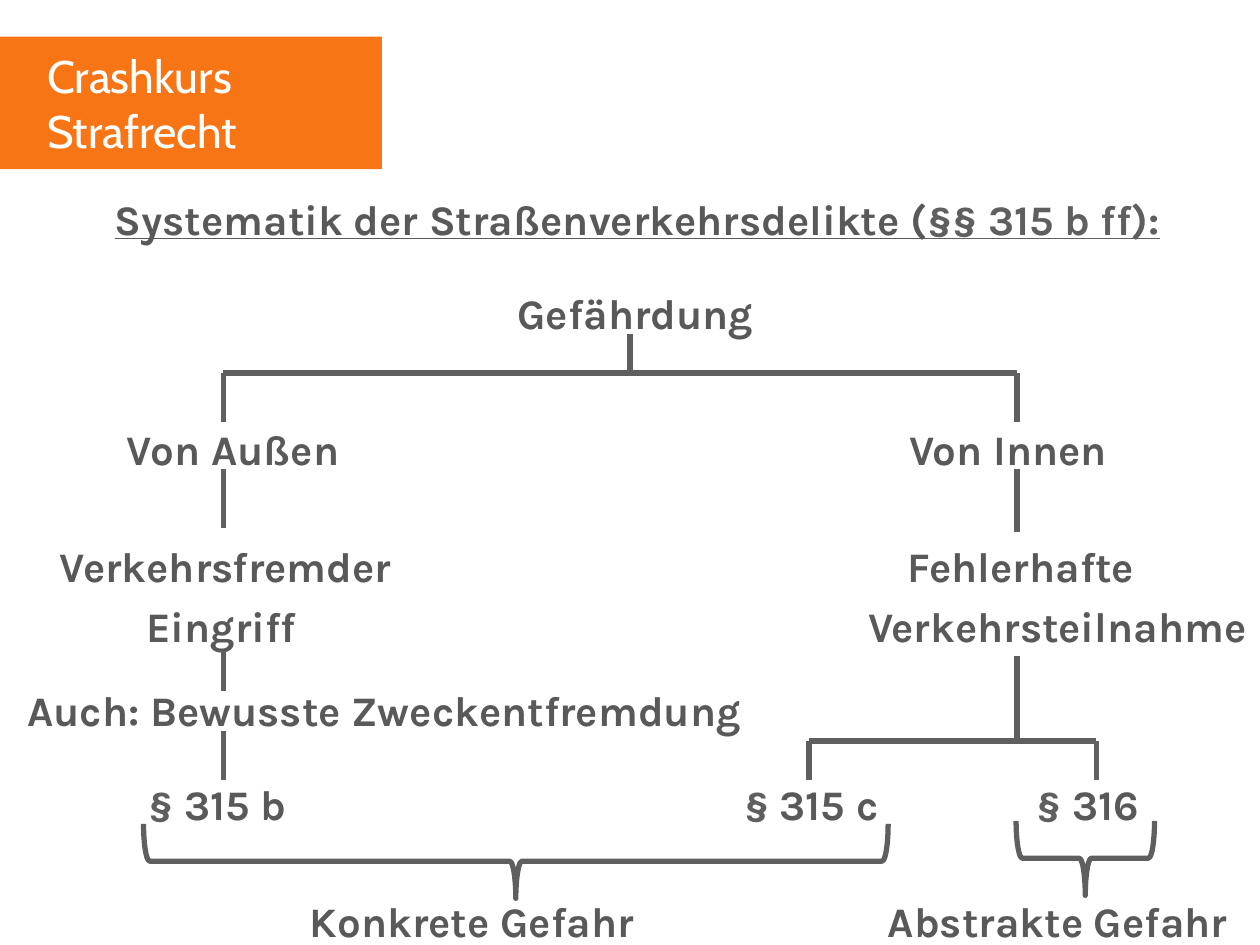
from lxml.etree import SubElement
from pptx import Presentation
from pptx.dml.color import RGBColor
from pptx.enum.shapes import MSO_CONNECTOR as Connector, MSO_SHAPE as Shape
from pptx.enum.text import MSO_ANCHOR as Anchor, MSO_AUTO_SIZE as AutoSize, PP_ALIGN as Align
from pptx.oxml.ns import qn
from pptx.util import Cm, Pt

ORANGE, WHITE, TEXT, GRAY = "F77515", "FFFFFF", "595959", "5F5F5F"
BOLD = {"name": "Karla", "size": Pt(24), "bold": True}
HEADING = {**BOLD, "underline": True}
BANNER = {"name": "Cabin", "size": Pt(26), "bold": False}
LABEL_HEIGHT = 1

# Columns of the tree and its horizontal bars
OUTER, ROOT, INNER = 4.5, 12.7, 20.5
SECTION_C, SECTION_316 = 16.31, 22.1
FORK, LOWER_FORK, SECTION_TOP = 7.52, 14.94, 15.72

# Top of each row, then text, left and width of its labels
ROWS = [
    (5.79, [("Gefährdung", 10.43, 4.8)]),
    (8.53, [("Von Außen", 2.56, 4.3), ("Von Innen", 18.33, 4)]),
    (10.9, [("Verkehrsfremder", 1.2, 6.7), ("Fehlerhafte", 18.3, 4.6)]),
    (12.1, [("Eingriff", 2.95, 3.1), ("Verkehrsteilnahme", 17.5, 7.7)]),
    (13.8, [("Auch: Bewusste Zweckentfremdung", 0.55, 14.4)]),
    (15.7, [("§ 315 b", 3, 2.8), ("§ 315 c", 15, 2.8), ("§ 316", 20.9, 2.1)]),
    (18.06, [("Konkrete Gefahr", 6.25, 6.6), ("Abstrakte Gefahr", 17.9, 6.9)]),
]

LINES = [
    (ROOT, 6.73, ROOT, FORK),
    (OUTER, FORK, INNER, FORK),
    (OUTER, FORK, OUTER, 8.51),
    (INNER, FORK, INNER, 8.51),
    (OUTER, 9.45, OUTER, 10.64),
    (INNER, 9.45, INNER, 10.72),
    (OUTER, 13.13, OUTER, 13.92),
    (OUTER, 14.73, OUTER, SECTION_TOP),
    (INNER, 13.23, INNER, LOWER_FORK),
    (SECTION_C, LOWER_FORK, SECTION_316, LOWER_FORK),
    (SECTION_C, LOWER_FORK, SECTION_C, SECTION_TOP),
    (SECTION_316, LOWER_FORK, SECTION_316, SECTION_TOP),
]

# Centre x, centre y and span of each brace
BRACES = [(10.4, 17.36, 15.01), (21.88, 17.3, 2.79)]


def rgb(value):
    return RGBColor.from_string(value)


def set_attrs(target, values):
    for name, value in values.items():
        setattr(target, name, value)


def set_place(sp, left, top, width, height):
    set_attrs(sp, {"left": Cm(left), "top": Cm(top),
                   "width": Cm(width), "height": Cm(height)})


def write(sp, runs, font, align, frame):
    """Fill a shape with one paragraph of (text, colour) runs."""
    tf = sp.text_frame
    margins = {f"margin_{side}": 0 for side in ("left", "right", "top", "bottom")}
    set_attrs(tf, {**margins, "auto_size": AutoSize.NONE, **frame})
    p = tf.paragraphs[0]
    p.alignment = align
    for text, color in runs:
        r = p.add_run()
        r.text = text
        set_attrs(r.font, font)
        r.font.color.rgb = rgb(color)


def add_banner(s, text):
    sp = s.shapes.add_shape(Shape.RECTANGLE, 0, Cm(0.74), Cm(7.7), Cm(2.67))
    sp.shadow.inherit = False
    sp.fill.solid()
    sp.fill.fore_color.rgb = rgb(ORANGE)
    sp.line.fill.background()
    write(sp, [(text, WHITE)], BANNER, Align.LEFT,
          {"word_wrap": True, "vertical_anchor": Anchor.MIDDLE,
           "margin_left": Cm(0.95), "margin_right": Cm(0.4)})


def add_heading(s, runs):
    sp = s.shapes.title
    set_place(sp, 0.3, 3.9, 25.1, 1.1)
    write(sp, runs, HEADING, Align.CENTER,
          {"word_wrap": True, "vertical_anchor": Anchor.TOP})


def add_label(s, text, left, top, width):
    sp = s.shapes.add_textbox(Cm(left), Cm(top), Cm(width), Cm(LABEL_HEIGHT))
    runs = [("§", GRAY), (text[1:], TEXT)] if text.startswith("§") else [(text, TEXT)]
    write(sp, runs, BOLD, Align.LEFT, {"word_wrap": False})


def style_line(line):
    line.color.rgb = rgb(GRAY)
    line.width = Pt(3)


def add_line(s, *ends):
    line = s.shapes.add_connector(Connector.STRAIGHT, *map(Cm, ends))
    SubElement(line._element.spPr, qn("a:effectLst"))
    style_line(line.line)


def add_brace(s, center_x, center_y, span, depth=1.5):
    """Add a brace that opens upwards."""
    sp = s.shapes.add_shape(Shape.LEFT_BRACE, Cm(center_x - depth / 2),
                            Cm(center_y - span / 2), Cm(depth), Cm(span))
    sp.rotation = 270
    sp.shadow.inherit = False
    sp.fill.background()
    style_line(sp.line)


def main():
    prs = Presentation()
    prs.slide_width, prs.slide_height = Cm(25.4), Cm(19.05)
    s = prs.slides.add_slide(prs.slide_layouts[5])
    add_banner(s, "Crashkurs Strafrecht")
    add_heading(s, [("Systematik der Straßenverkehrsdelikte (", TEXT),
                    ("§§ 315 b ff):", GRAY)])
    for top, labels in ROWS:
        for text, left, width in labels:
            add_label(s, text, left, top, width)
    for ends in LINES:
        add_line(s, *ends)
    for brace in BRACES:
        add_brace(s, *brace)
    prs.save("out.pptx")


if __name__ == "__main__":
    main()
